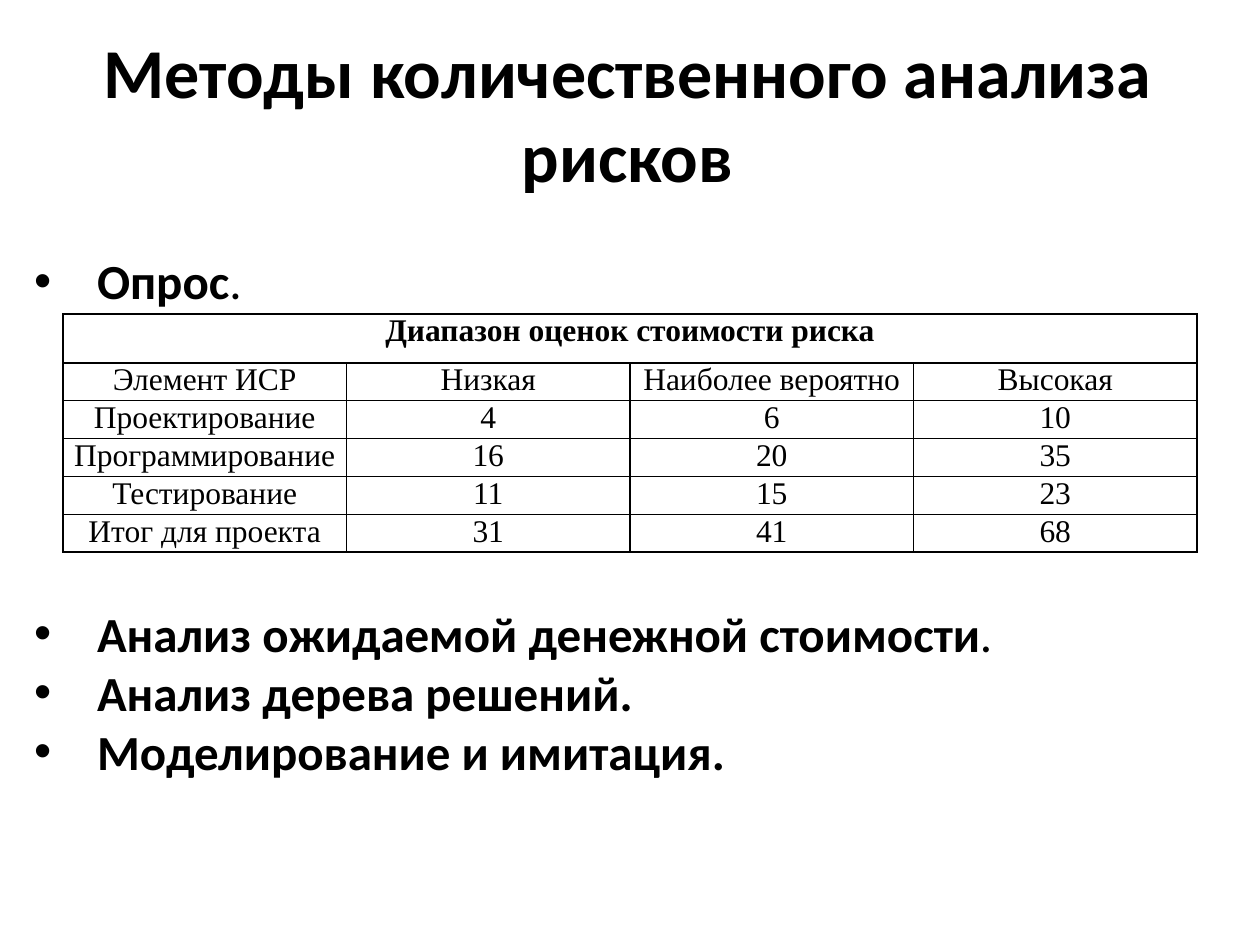
from dataclasses import dataclass

from lxml import etree
from pptx import Presentation
from pptx.dml.color import RGBColor
from pptx.enum.text import MSO_AUTO_SIZE, MSO_ANCHOR, PP_ALIGN
from pptx.oxml.ns import qn
from pptx.util import Inches, Pt

CENTER = PP_ALIGN.CENTER
LEFT = PP_ALIGN.LEFT
TOP = MSO_ANCHOR.TOP
MIDDLE = MSO_ANCHOR.MIDDLE
FIT_SHAPE = MSO_AUTO_SIZE.SHAPE_TO_FIT_TEXT

SLIDE_WIDTH, SLIDE_HEIGHT = Inches(10), Inches(7.5)
TITLE_AND_CONTENT = 1


@dataclass(frozen=True)
class Theme:
    """Colours, fonts and sizes of the slide."""

    ink: RGBColor = RGBColor(0, 0, 0)
    heading_font: str = "Calibri"
    table_font: str = "Times New Roman"
    title_size: Pt = Pt(40)
    method_size: Pt = Pt(28)
    table_size: Pt = Pt(18)
    border: Pt = Pt(1)
    indent: Inches = Inches(0.5)
    table_gap: Pt = Pt(168)


THEME = Theme()

TITLE = "Методы количественного анализа рисков"
METHODS = [
    [("Опрос", True), (".", False)],
    [("Анализ ожидаемой денежной стоимости", True), (".", False)],
    [("Анализ дерева решений.", True)],
    [("Моделирование и имитация.", True)],
]
TABLE_TITLE = "Диапазон оценок стоимости риска"
ESTIMATES = [
    ["Элемент ИСР", "Низкая", "Наиболее вероятно", "Высокая"],
    ["Проектирование", "4", "6", "10"],
    ["Программирование", "16", "20", "35"],
    ["Тестирование", "11", "15", "23"],
    ["Итог для проекта", "31", "41", "68"],
]


def apply(target, formats):
    """Set every attribute named in formats on the target."""
    for attribute, value in formats.items():
        setattr(target, attribute, value)


def add_run(paragraph, text, font_name, size, bold):
    """Append one formatted run to a paragraph."""
    run = paragraph.add_run()
    run.text = text
    apply(run.font, {"name": font_name, "size": size, "bold": bold})
    run.font.color.rgb = THEME.ink


def place(placeholder, left, top, width, height):
    """Position a placeholder by inches and fit it to its text."""
    apply(placeholder, {
        "left": Inches(left), "top": Inches(top),
        "width": Inches(width), "height": Inches(height),
    })
    apply(placeholder.text_frame, {"word_wrap": True, "auto_size": FIT_SHAPE})


def fill_title(title):
    """Write the centred slide title."""
    place(title, 0.54, 0.17, 8.88, 1.45)
    title.text_frame.vertical_anchor = MIDDLE
    heading = title.text_frame.paragraphs[0]
    heading.alignment = CENTER
    add_run(heading, TITLE, THEME.heading_font, THEME.title_size, True)


def fill_methods(body):
    """Write the bulleted methods, leaving room for the table after the first."""
    place(body, 0.17, 1.94, 9.64, 4.34)
    frame = body.text_frame
    frame.vertical_anchor = TOP
    for index, pieces in enumerate(METHODS):
        method = frame.add_paragraph() if index else frame.paragraphs[0]
        gap = THEME.table_gap if index == 1 else Pt(0)
        apply(method, {"alignment": LEFT, "space_before": gap})
        properties = method._p.get_or_add_pPr()
        properties.set("marL", str(THEME.indent))
        properties.set("indent", str(-THEME.indent))
        for text, bold in pieces:
            add_run(method, text, THEME.heading_font, THEME.method_size, bold)


def add_borders(cell):
    """Draw a solid line on all four sides of a cell."""
    properties = cell._tc.get_or_add_tcPr()
    for side in ("a:lnL", "a:lnR", "a:lnT", "a:lnB"):
        line = etree.SubElement(properties, qn(side), w=str(THEME.border))
        solid = etree.SubElement(line, qn("a:solidFill"))
        etree.SubElement(solid, qn("a:srgbClr"), val=str(THEME.ink))


def format_cell(cell, text, bold):
    """Give a cell its borders, margins and centred text."""
    add_borders(cell)
    cell.fill.background()
    apply(cell, {
        "margin_left": Inches(0.07), "margin_right": Inches(0.07),
        "margin_top": 0, "margin_bottom": 0, "vertical_anchor": TOP,
    })
    entry = cell.text_frame.paragraphs[0]
    entry.alignment = CENTER
    if text:
        add_run(entry, text, THEME.table_font, THEME.table_size, bold)


def add_estimates(slide):
    """Add the cost table under a heading that spans all columns."""
    column_count = len(ESTIMATES[0])
    rows = [[TABLE_TITLE] + [""] * (column_count - 1)] + ESTIMATES
    margin = int(SLIDE_WIDTH * 0.05)
    table = slide.shapes.add_table(
        len(rows), column_count, margin, Inches(2.49),
        SLIDE_WIDTH - 2 * margin, Inches(1.89),
    ).table
    apply(table, {"first_row": False, "horz_banding": False})
    for row_index, texts in enumerate(rows):
        is_heading = row_index == 0
        table.rows[row_index].height = Inches(0.39 if is_heading else 0.3)
        for column_index, text in enumerate(texts):
            format_cell(table.cell(row_index, column_index), text, is_heading)
    table.cell(0, 0).merge(table.cell(0, column_count - 1))


def main():
    """Build and save the slide."""
    deck = Presentation()
    apply(deck, {"slide_width": SLIDE_WIDTH, "slide_height": SLIDE_HEIGHT})
    slide = deck.slides.add_slide(deck.slide_layouts[TITLE_AND_CONTENT])
    fill_title(slide.shapes.title)
    fill_methods(slide.placeholders[1])
    add_estimates(slide)
    deck.save("out.pptx")


if __name__ == "__main__":
    main()
